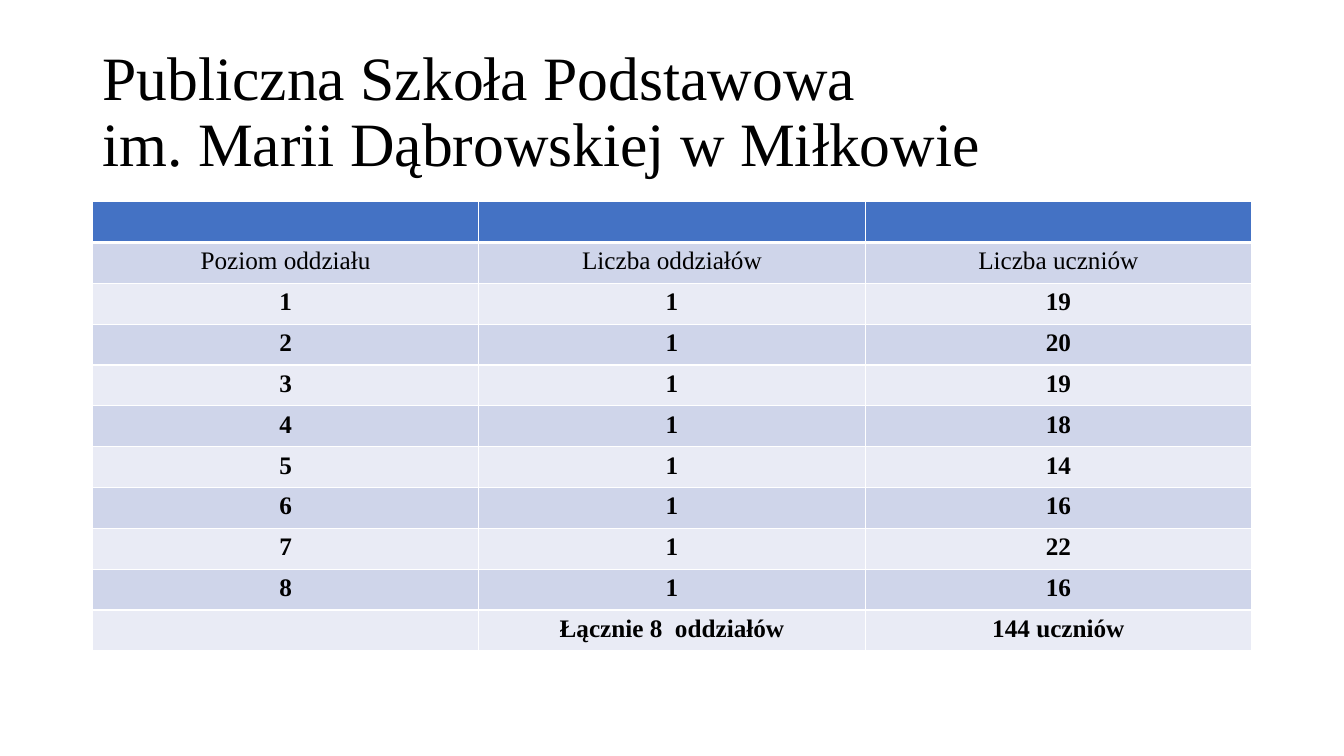
"""Build a slide with a school's classes and pupils by level."""
from dataclasses import dataclass

from lxml import etree
from pptx import Presentation
from pptx.dml.color import RGBColor
from pptx.enum.text import MSO_ANCHOR, PP_ALIGN
from pptx.oxml.ns import qn
from pptx.util import Inches, Pt

MIDDLE = MSO_ANCHOR.MIDDLE
CENTER = PP_ALIGN.CENTER
BLACK = RGBColor(0x00, 0x00, 0x00)
WHITE = RGBColor(0xFF, 0xFF, 0xFF)
BLUE = RGBColor(0x44, 0x72, 0xC4)
DARK = RGBColor(0xCF, 0xD5, 0xEA)
LIGHT = RGBColor(0xE9, 0xEB, 0xF5)
FONT = "Times New Roman"
WIDTH, HEIGHT = Inches(13.33), Inches(7.5)
COL, ROW = WIDTH / 160, HEIGHT / 75


@dataclass(frozen=True)
class Area:
    """A place on the grid, in columns and rows."""
    left: float
    top: float
    wide: float
    high: float

    def box(self) -> tuple[int, int, int, int]:
        """Return the place as slide lengths."""
        return (round(self.left * COL), round(self.top * ROW),
                round(self.wide * COL), round(self.high * ROW))


@dataclass(frozen=True)
class Line:
    """One row of the table."""
    texts: tuple[str, str, str]
    bold: bool = True


TITLE = Area(11, 4, 138, 14.5)
TABLE = Area(11, 20, 138, 44.6)
HEADING = ("Publiczna Szkoła Podstawowa", "im. Marii Dąbrowskiej w Miłkowie")
PUPILS = (19, 20, 19, 18, 14, 16, 22, 16)
LINES = (
    Line(("", "", "")),
    Line(("Poziom oddziału", "Liczba oddziałów", "Liczba uczniów"), False),
    *(Line((str(level), "1", str(count)))
      for level, count in enumerate(PUPILS, 1)),
    Line(("", f"Łącznie {len(PUPILS)}  oddziałów", f"{sum(PUPILS)} uczniów")),
)


def add_run(para, text: str, size: float, bold: bool = False) -> None:
    """Add a styled run to a paragraph."""
    run = para.add_run()
    run.text = text
    font = run.font
    font.name, font.size, font.bold = FONT, Pt(size), bold
    font.color.rgb = BLACK


def add_title(slide) -> None:
    """Draw the two-line heading."""
    frame = slide.shapes.add_textbox(*TITLE.box()).text_frame
    frame.word_wrap = True
    frame.vertical_anchor = MIDDLE
    para = frame.paragraphs[0]
    para.line_spacing = 0.9
    for index, text in enumerate(HEADING):
        if index:
            para.add_line_break()
        add_run(para, text, 44)


def add_edge(cell, side: str, width: float) -> None:
    """Give one side of a cell a white border."""
    props = cell._tc.get_or_add_tcPr()
    edge = etree.SubElement(props, qn(f"a:ln{side}"), w=str(Pt(width)))
    fill = etree.SubElement(edge, qn("a:solidFill"))
    etree.SubElement(fill, qn("a:srgbClr"), val=str(WHITE))


def fill_cell(cell, text: str, bold: bool, index: int) -> None:
    """Style a cell and write its text."""
    for side in "LRTB":
        thick = (index, side) in ((0, "B"), (1, "T"))
        add_edge(cell, side, 3 if thick else 1)
    cell.fill.solid()
    cell.fill.fore_color.rgb = (
        BLUE if index == 0 else DARK if index % 2 else LIGHT)
    para = cell.text_frame.paragraphs[0]
    para.alignment = CENTER
    if text:
        add_run(para, text, 18, bold)


def add_grid(slide) -> None:
    """Draw the table of levels, classes and pupils."""
    table = slide.shapes.add_table(len(LINES), 3, *TABLE.box()).table
    table.first_row = table.horz_banding = False
    for index, line in enumerate(LINES):
        for cell, text in zip(table.rows[index].cells, line.texts):
            fill_cell(cell, text, line.bold, index)


def main() -> None:
    """Build and save the slide."""
    deck = Presentation()
    deck.slide_width, deck.slide_height = WIDTH, HEIGHT
    slide = deck.slides.add_slide(deck.slide_layouts[6])
    add_title(slide)
    add_grid(slide)
    deck.save("out.pptx")


if __name__ == "__main__":
    main()
